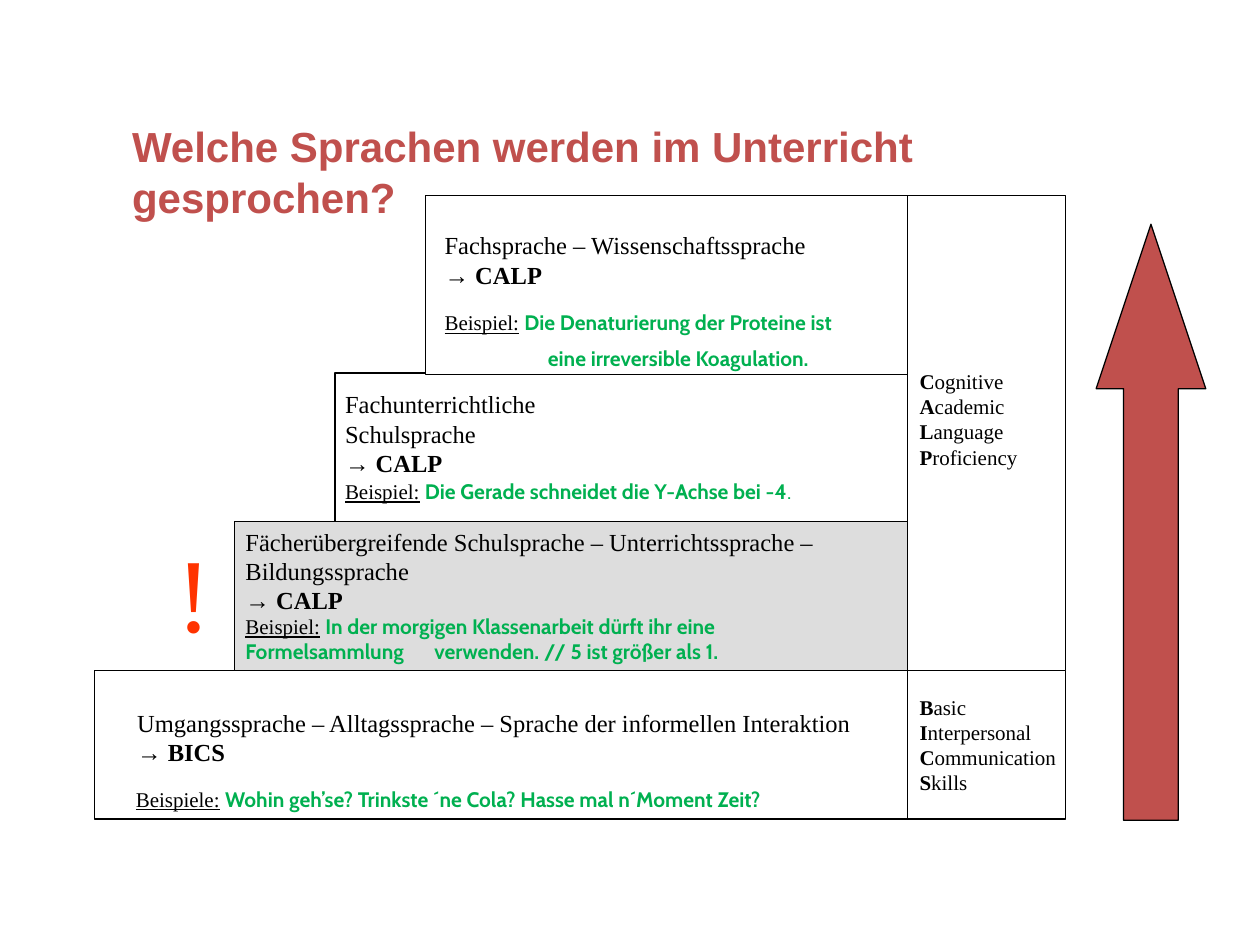
from collections import namedtuple
from pptx import Presentation
from pptx import util as u
from pptx.dml.color import RGBColor
from pptx.enum import shapes, text

Style = namedtuple("Style", "font size color bold underline", defaults=(False, False))
SERIF, SANS, ROUND = "Times New Roman", "Arial", "Cabin"


class Theme:
    black, white, grey, red = "000000", "FFFFFF", "DDDDDD", "C0504D"
    outline = 0.75
    styles = {
        "title": Style(SANS, 24, red, True),
        "body": Style(SERIF, 14, black),
        "arrow": Style(SANS, 14, black, True),
        "level": Style(SERIF, 14, black, True),
        "label": Style(SERIF, 12, black, False, True),
        "small": Style(SERIF, 12, black),
        "initial": Style(SERIF, 12, black, True),
        "example": Style(ROUND, 12, "00B050", True),
        "end": Style(ROUND, 12, "00B050"),
        "alert": Style(SERIF, 60, "FF3300"),
    }


# Grid of 100 columns by 75 rows
CELL = 0.1
COLUMNS, ROWS = 100, 75
STEP = 11.8           # rows per stair
BASE = 65             # bottom row of the stairs
SIDE, SIDE_WIDTH = 72, 12.6
STAIR_TOP = 15.5
BASE_TOP = BASE - STEP


def cells(*counts):
    return [u.Inches(count * CELL) for count in counts]


def color(value):
    return RGBColor.from_string(value)


def write(box, paragraphs):
    """Each paragraph is a list of (wording, style name) spans."""
    frame = box.text_frame
    frame.word_wrap = True
    for index, spans in enumerate(paragraphs):
        para = frame.paragraphs[0] if index == 0 else frame.add_paragraph()
        para.alignment = text.PP_ALIGN.LEFT
        for wording, name in spans:
            style = Theme.styles[name]
            # A line break inside a span splits it into several runs
            for number, line in enumerate(wording.split("\n")):
                if number:
                    para.add_line_break()
                span = para.add_run()
                span.text = line
                font = span.font
                font.name, font.size = style.font, u.Pt(style.size)
                font.bold, font.underline = style.bold, style.underline
                font.color.rgb = color(style.color)
    return frame


def add_text(page, area, paragraphs):
    return write(page.shapes.add_textbox(*cells(*area)), paragraphs)


def add_block(page, area, fill=Theme.white, kind=shapes.MSO_SHAPE.RECTANGLE):
    block = page.shapes.add_shape(kind, *cells(*area))
    block.shadow.inherit = False
    block.fill.solid()
    block.fill.fore_color.rgb = color(fill)
    block.line.color.rgb = color(Theme.black)
    block.line.width = u.Pt(Theme.outline)
    return block


def add_side(page, top, height, words):
    frame = write(add_block(page, (SIDE, top, SIDE_WIDTH, height)),
                  [[(word[0], "initial"), (word[1:], "small")] for word in words])
    frame.vertical_anchor = text.MSO_ANCHOR.MIDDLE
    frame.margin_right = 0
    return frame


def add_heading(page, area, lines, level):
    add_text(page, area, [[(line, "body")] for line in lines]
             + [[("→", "arrow"), (" " + level, "level")]])


def add_example(page, area, label, wording, *more):
    return add_text(page, area, [[(label, "label"), (" ", "small"), (wording, "example"), *more]])


def main():
    deck = Presentation()
    deck.slide_width, deck.slide_height = cells(COLUMNS, ROWS)
    page = deck.slides.add_slide(deck.slide_layouts[6])

    # Title
    add_text(page, (9.5, 9.1, 83, 9),
             [[("Welche Sprachen werden im Unterricht gesprochen?", "title")]])

    # Stairs
    add_block(page, (7.5, BASE_TOP, 64.7, STEP))
    add_block(page, (26.6, BASE_TOP - 2 * STEP, 46.3, STEP))
    add_block(page, (18.6, BASE_TOP - STEP, 54.3, STEP), Theme.grey)
    add_block(page, (33.8, STAIR_TOP, 38.4, 14.2))

    # Side column with the two abbreviations
    calp = add_side(page, STAIR_TOP, BASE_TOP - STAIR_TOP,
                    ["Cognitive", "Academic", "Language", "Proficiency"])
    calp.margin_bottom = u.Inches(0.27)
    add_side(page, BASE_TOP, STEP, ["Basic", "Interpersonal", "Communication", "Skills"])

    # Rising arrow
    arrow = add_block(page, (87, 17.8, 8.7, 47.3), Theme.red, shapes.MSO_SHAPE.UP_ARROW)
    arrow.adjustments[0], arrow.adjustments[1] = 0.5, 1.5

    # Everyday language
    add_heading(page, (9.9, 55.7, 59.1, 5.7),
                ["Umgangssprache – Alltagssprache – Sprache der informellen Interaktion"], "BICS")
    add_example(page, (9.8, 61.9, 63, 7.1), "Beispiele:",
                "Wohin geh’se? Trinkste ´ne Cola? Hasse mal n´Moment Zeit?")

    # Language across subjects
    add_heading(page, (18.5, 41.3, 47.6, 8),
                ["Fächerübergreifende Schulsprache – Unterrichtssprache –", "Bildungssprache"], "CALP")
    add_example(page, (18.5, 48.2, 51.6, 5.1), "Beispiel:",
                "In der morgigen Klassenarbeit dürft ihr eine Formelsammlung\t"
                "verwenden. // 5 ist größer als 1.")

    # Language of one subject
    add_heading(page, (26.4, 30.4, 28, 8), ["Fachunterrichtliche\nSchulsprache"], "CALP")
    add_example(page, (26.4, 37.5, 42.6, 3), "Beispiel:",
                "Die Gerade schneidet die Y-Achse bei -4", (".", "end"))

    # Scientific language
    add_heading(page, (34.3, 17.8, 30.8, 5.7), ["Fachsprache – Wissenschaftssprache"], "CALP")
    frame = add_text(page, (34.3, 24.1, 38.2, 6.1), [
        [("Beispiel:", "label"), (" ", "small"), ("Die Denaturierung der Proteine ist", "example")],
        [("eine irreversible Koagulation.", "example")]])
    second = frame.paragraphs[1]
    second.space_before = u.Pt(6)
    second._p.get_or_add_pPr().set("marL", str(u.Inches(0.82)))

    # Exclamation mark
    add_text(page, (13, 41.4, 4.8, 11), [[("!", "alert")]])

    deck.save("out.pptx")


if __name__ == "__main__":
    main()
